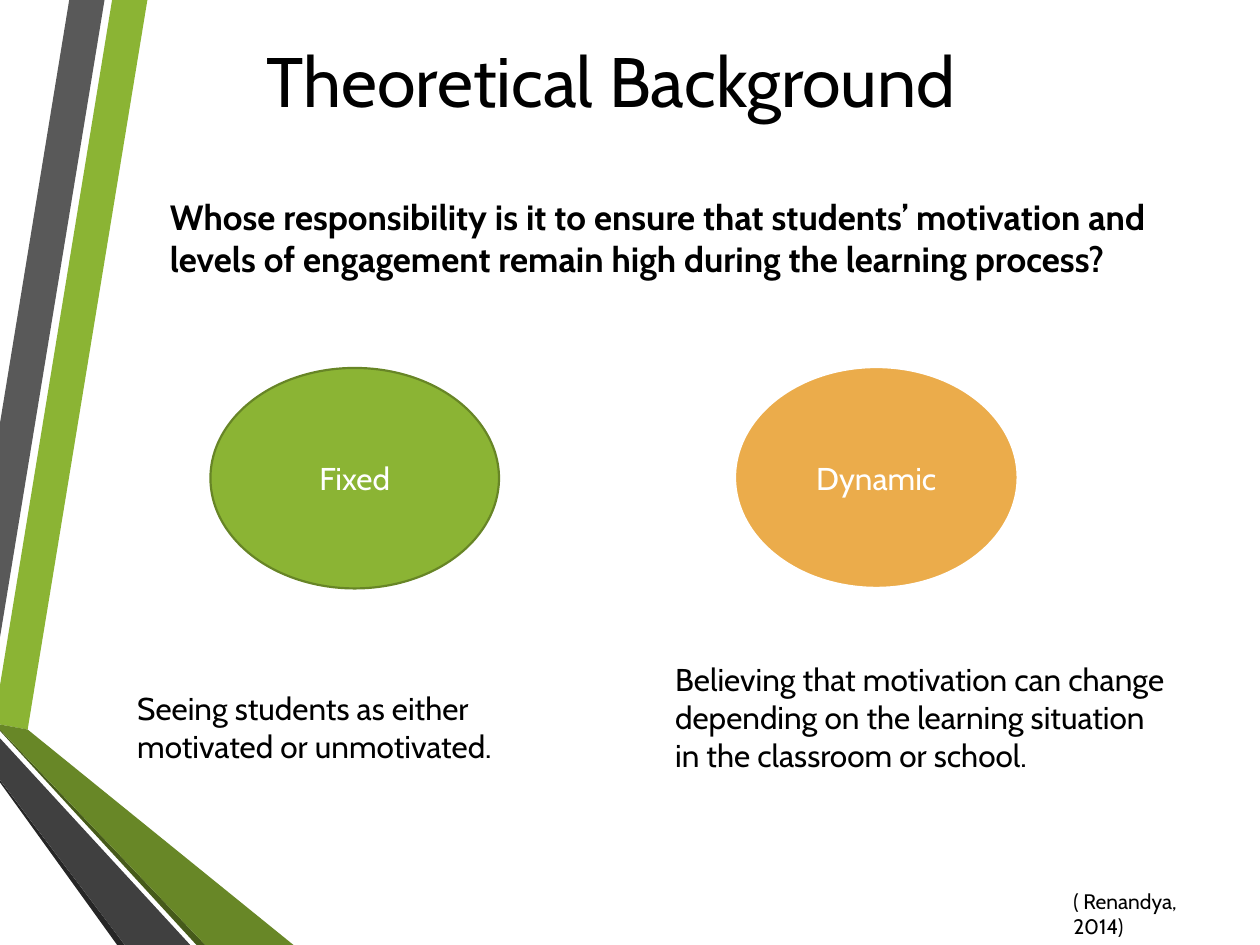
import pptx
import pptx.util
import pptx.dml.color
import pptx.enum.shapes
import pptx.enum.text

ALIGN = pptx.enum.text.PP_ALIGN
ANCHOR = pptx.enum.text.MSO_ANCHOR
OVAL = pptx.enum.shapes.MSO_SHAPE.OVAL

deck = pptx.Presentation()
deck.slide_width = pptx.util.Inches(10)
deck.slide_height = pptx.util.Inches(7.5)
cell = deck.slide_width // 100  # the slide is 100 columns by 75 rows
slide = deck.slides.add_slide(deck.slide_layouts[5])
shapes = slide.shapes
color = pptx.dml.color.RGBColor.from_string


def place(*spots):
    """Turn grid columns and rows into slide lengths."""
    return [round(spot * cell) for spot in spots]


def write(shape, words, size, tint="000000", bold=False,
          align=ALIGN.LEFT, anchor=ANCHOR.TOP):
    frame = shape.text_frame
    frame.word_wrap = True
    frame.vertical_anchor = anchor
    line = frame.paragraphs[0]
    line.alignment = align
    run = line.add_run()
    run.text = words
    run.font.name = "Cabin"
    run.font.size = pptx.util.Pt(size)
    run.font.bold = bold
    run.font.color.rgb = color(tint)


# Ribbon down the left edge
bands = [
    ("8BB434", [(0, 54.4), (0, 57.5), (2.2, 57.9), (11.7, 0), (8.9, 0)]),
    ("595959", [(8.3, 0), (5.5, 0), (0, 33.6), (0, 50.6)]),
    ("262626", [(0, 61.9), (0, 62.1), (9.3, 75), (9.9, 75)]),
    ("465A1A", [(0, 57.9), (0, 58), (15.6, 75), (16.3, 75)]),
    ("688727", [(0, 57.9), (16.3, 75), (23.3, 75), (2.2, 57.9), (0, 57.5)]),
    ("404040", [(0, 61.9), (9.9, 75), (15.1, 75), (0, 58.6)]),
]
for fill, spots in bands:
    first, *rest = [place(*spot) for spot in spots]
    pen = shapes.build_freeform(*first)
    pen.add_line_segments(rest, close=True)
    band = pen.convert_to_shape()
    band.shadow.inherit = False
    band.fill.solid()
    band.fill.fore_color.rgb = color(fill)
    band.line.fill.background()

# Title
title = shapes.title
title.left, title.top, title.width, title.height = place(-3, 0.3, 103, 12)
write(title, "Theoretical Background", 40,
      align=ALIGN.CENTER, anchor=ANCHOR.MIDDLE)

# Two views of motivation
views = [
    ("Fixed", (16.7, 29.2, 22.9, 17.5), "8BB434", "678526", 1.25),
    ("Dynamic", (58.3, 29.1, 22.5, 17.6), "EBAC4B", "FFFFFF", 1.75),
]
for name, box, fill, edge, width in views:
    oval = shapes.add_shape(OVAL, *place(*box))
    oval.shadow.inherit = False
    oval.fill.solid()
    oval.fill.fore_color.rgb = color(fill)
    oval.line.color.rgb = color(edge)
    oval.line.width = pptx.util.Pt(width)
    write(oval, name, 18, "FFFFFF", align=ALIGN.CENTER, anchor=ANCHOR.MIDDLE)

# Question, meaning of each view, and source
notes = [
    ("Whose responsibility is it to ensure that students’ motivation and "
     "levels of engagement remain high during the learning process?",
     (12.5, 15, 79.6, 11.1), 20, True, ANCHOR.TOP),
    ("Seeing students as either motivated or unmotivated.",
     (9.9, 49.2, 38.8, 17), 18, False, ANCHOR.MIDDLE),
    ("Believing that motivation can change depending on the learning "
     "situation in the classroom or school.",
     (52.6, 51.9, 40.8, 13.1), 18, False, ANCHOR.TOP),
    ("( Renandya, 2014)", (84.2, 70, 13, 5), 12, False, ANCHOR.TOP),
]
for words, box, size, bold, anchor in notes:
    note = shapes.add_textbox(*place(*box))
    write(note, words, size, bold=bold, anchor=anchor)

deck.save("out.pptx")
